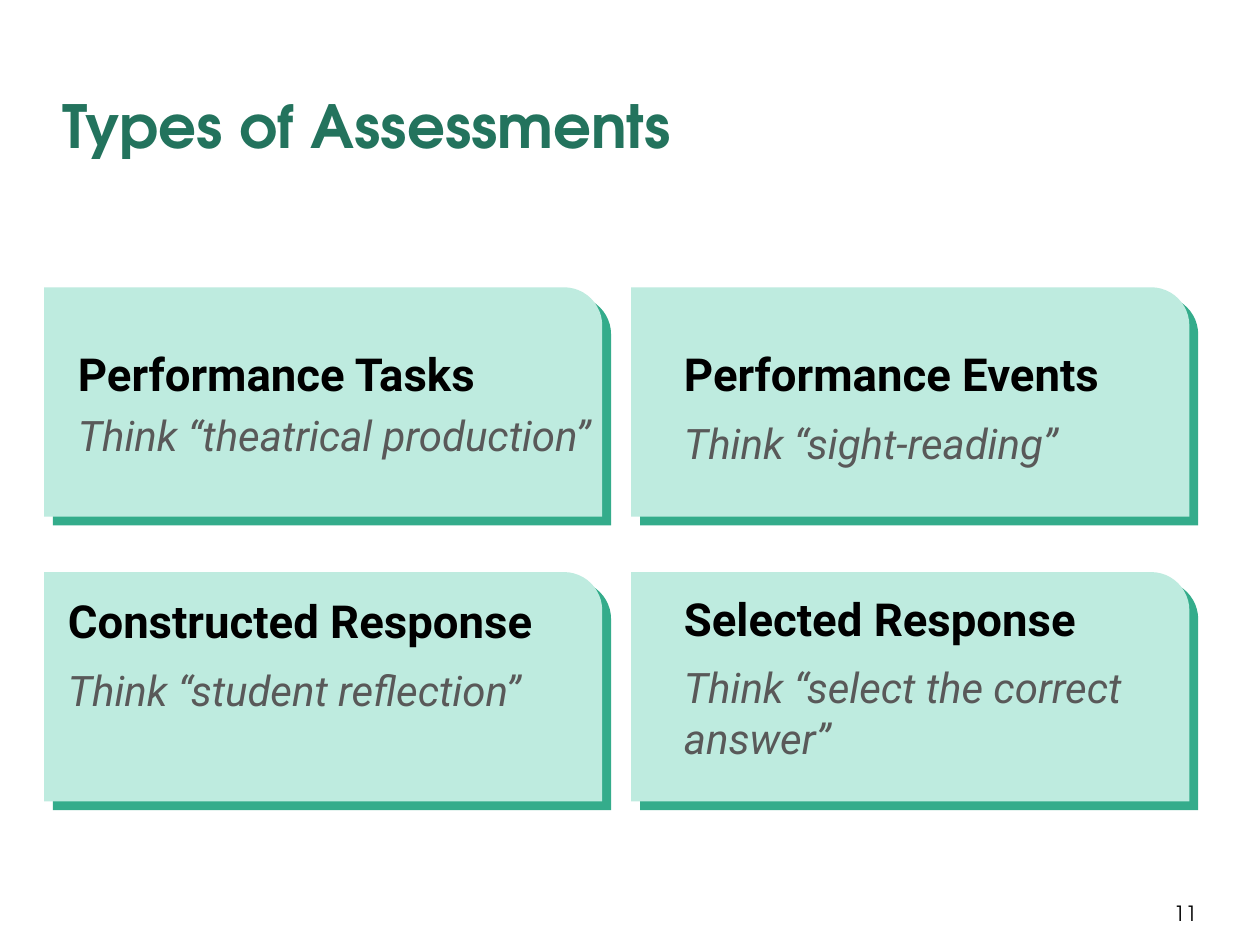
from pptx import Presentation, util as u
from pptx.dml.color import RGBColor
from pptx.enum import shapes, text

COLORS = {"title": "23735D", "shade": "34AC8B", "card": "BEEBDF",
          "heading": "000000", "hint": "595959"}
DISPLAY, BODY = "TeX Gyre Adventor", "Roboto"
FORMATS = {
    "title": {"name": DISPLAY, "size": u.Pt(34), "bold": True},
    "number": {"name": DISPLAY, "size": u.Pt(12)},
    "heading": {"name": BODY, "size": u.Pt(26), "bold": True},
    "hint": {"name": BODY, "size": u.Pt(24), "italic": True},
}


class SlideBuilder:
    def __init__(self, page):
        self.page = page

    def card(self, left, top, color):
        shape = self.page.shapes.add_shape(
            shapes.MSO_SHAPE.ROUND_1_RECTANGLE, u.Inches(left), u.Inches(top),
            u.Inches(4.43), u.Inches(1.82))
        shape.shadow.inherit = False
        shape.fill.solid()
        shape.fill.fore_color.rgb = RGBColor.from_string(COLORS[color])
        shape.line.fill.background()

    def text(self, area, lines, gap=0, **frame_format):
        """Each line is (wording, format name, colour name)."""
        box = self.page.shapes.add_textbox(*map(u.Inches, area))
        frame = box.text_frame
        frame.word_wrap = True
        for key, value in frame_format.items():
            setattr(frame, key, value)
        for index, (wording, style, color) in enumerate(lines):
            para = frame.add_paragraph() if index else frame.paragraphs[0]
            if index:
                para.space_before = u.Pt(gap)
            span = para.add_run()
            span.text = wording
            for key, value in FORMATS[style].items():
                setattr(span.font, key, value)
            span.font.color.rgb = RGBColor.from_string(COLORS[color])
        return frame


def main():
    deck = Presentation()
    deck.slide_width, deck.slide_height = u.Inches(10), u.Inches(7.5)
    page = deck.slides.add_slide(deck.slide_layouts[6])
    builder = SlideBuilder(page)

    # Title
    builder.text((0.5, 0.02, 9, 1.25),
                 [("Types of Assessments", "title", "title")],
                 vertical_anchor=text.MSO_ANCHOR.BOTTOM,
                 margin_left=0, margin_right=0, margin_bottom=0)

    # Cards, each on an offset darker card
    for top in (2.28, 4.54):
        for left in (0.35, 5.01):
            builder.card(left + 0.07, top + 0.07, "shade")
            builder.card(left, top, "card")

    # Assessment types: text area, gap, heading, hint
    assessments = [
        ((0.52, 2.7, 4.43, 1.31), 5,
         "Performance Tasks", "Think “theatrical production”"),
        ((5.33, 2.7, 3.89, 1.21), 9.4,
         "Performance Events", "Think “sight-reading”"),
        ((0.44, 4.66, 4.34, 1.33), 9.4,
         "Constructed Response", "Think “student reflection”"),
        ((5.33, 4.64, 4.1, 1.72), 9.4,
         "Selected Response", "Think “select the correct answer”"),
    ]
    for area, gap, heading, hint in assessments:
        builder.text(area, [(heading, "heading", "heading"),
                            (hint, "hint", "hint")], gap)

    # Slide number
    number = builder.text((8.67, 6.95, 0.83, 0.4),
                          [("11", "number", "heading")],
                          vertical_anchor=text.MSO_ANCHOR.BOTTOM,
                          margin_left=0, margin_right=0,
                          margin_top=0, margin_bottom=0)
    number.paragraphs[0].alignment = text.PP_ALIGN.RIGHT

    deck.save("out.pptx")


if __name__ == "__main__":
    main()
